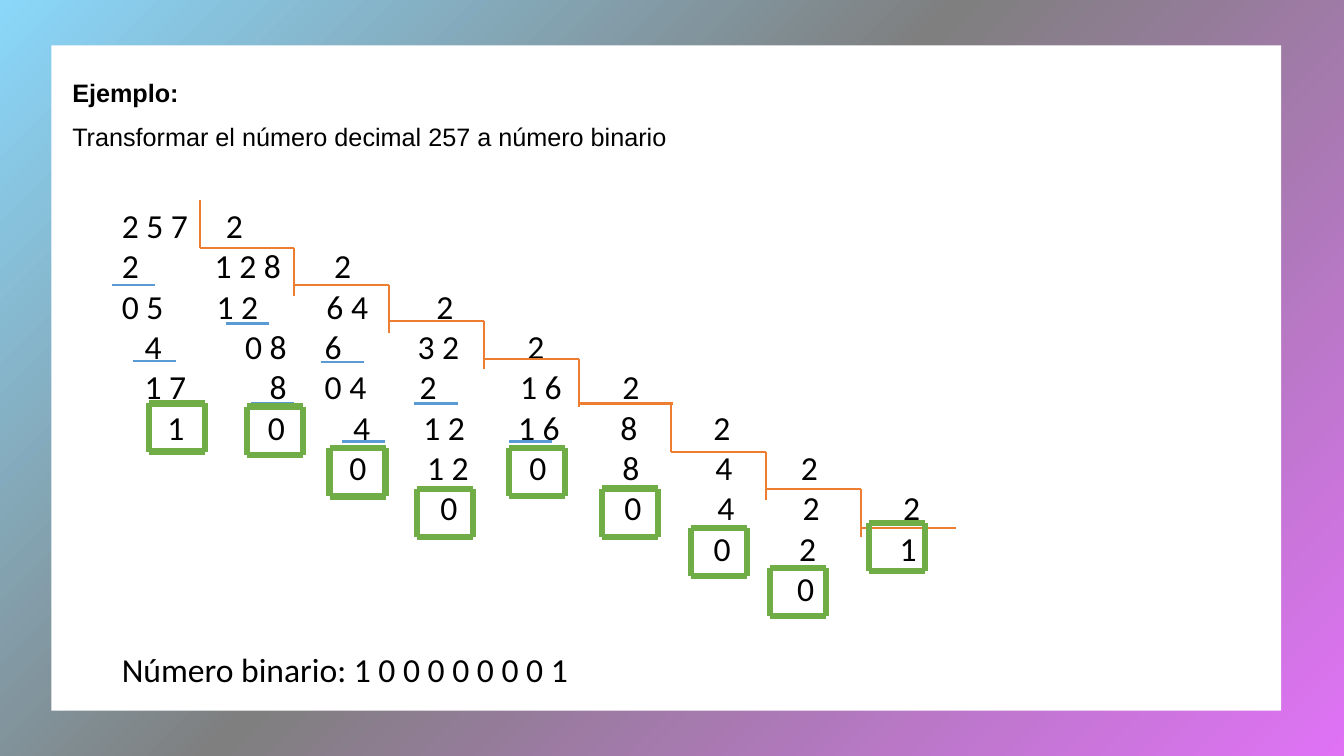
from lxml.etree import SubElement
from pptx import Presentation
from pptx.dml.color import RGBColor
from pptx.enum.shapes import MSO_CONNECTOR as CONNECTOR, MSO_SHAPE as SHAPE
from pptx.enum.text import MSO_AUTO_SIZE as AUTO_SIZE
from pptx.oxml.ns import qn
from pptx.util import Pt

COLORS = {
    "panel": "FFFFFF", "text": "000000",
    "bracket": "ED7D31", "underline": "5B9BD5", "remainder": "70AD47",
    "pink": "E072F6", "gray": "7F7F7F", "sky": "8AD7FA",
}

# Each row lists (offset from the left text edge, digits).
DIVISION_ROWS = [
    [(0, "2 5 7"), (74.4, "2")],
    [(0, "2"), (66.4, "1 2 8"), (151.7, "2")],
    [(0, "0 5"), (67.7, "1 2"), (146.2, "6 4"), (224.7, "2")],
    [(16.3, "4"), (88.1, "0 8"), (144.9, "6"), (211.3, "3 2"), (289.8, "2")],
    [(16.3, "1 7"), (105.7, "8"), (145, "0 4"), (212.7, "2"), (284.5, "1 6"), (357.6, "2")],
    [(32.5, "1"), (104.3, "0"), (165.3, "4"), (215.4, "1 2"), (283.1, "1 6"),
     (356.2, "8"), (422.6, "2")],
    [(162.6, "0"), (218.1, "1 2"), (291.2, "0"), (357.6, "8"), (424, "4"), (485, "2")],
    [(227.6, "0"), (359, "0"), (425.4, "4"), (486.4, "2"), (558.2, "2")],
    [(422.8, "0"), (483.8, "2"), (555.6, "1")],
    [(482.4, "0")],
]
RESULT_ROW = [(0, "Número binario: 1 0 0 0 0 0 0 0 1")]

BRACKET_WIDTH, BRACKET_DROP = 67.7, 34.4
BRACKET_LEFTS = [142.6, 210.2, 277.9, 345.6, 413.3, 479.6, 547.3, 615]
BRACKET_LEVELS = [142.6, 177.1, 203.8, 229.1, 256.3, 288.2, 322.6, 349.2, 377.3]

UNDERLINE_WIDTH = 31
UNDERLINES = [
    (79.9, 203.8), (95, 257.8), (161.3, 231.1), (179.3, 288), (229, 258.5), (244.1, 315.4),
    (295.9, 288.2), (298.1, 349.2), (363.6, 315.4), (431.3, 349.2), (496.1, 377.3),
    (550.1, 405.4),
]

REMAINDER_WIDTH, REMAINDER_HEIGHT = 40, 34.4
REMAINDERS = [
    (106.6, 288.2), (176.4, 290.4), (235.4, 320.2), (298.1, 349.2), (363.6, 319.9),
    (429.8, 349), (493.4, 377), (550.1, 405.6), (620.6, 373.5),
]


class DivisionSlide:
    def __init__(self, prs):
        self.s = prs.slides.add_slide(prs.slide_layouts[6])

    def color(self, name):
        return RGBColor.from_string(COLORS[name])

    def radial_background(self, stops):
        """Fill the background with rings centred on the bottom right corner."""
        self.s.background.fill.gradient()
        grad = self.s.element.find(".//" + qn("a:gradFill"))
        for child in list(grad):
            grad.remove(child)
        gs_list = SubElement(grad, qn("a:gsLst"))
        for percent, name in stops:
            gs = SubElement(gs_list, qn("a:gs"), pos=str(percent * 1000))
            SubElement(gs, qn("a:srgbClr"), val=COLORS[name])
        rings = SubElement(grad, qn("a:path"), {"path": "circle"})
        SubElement(rings, qn("a:fillToRect"), l="100000", t="100000")
        SubElement(grad, qn("a:tileRect"), r="-100000", b="-100000")

    def rect(self, x, y, w, h, fill):
        sp = self.s.shapes.add_shape(SHAPE.RECTANGLE, Pt(x), Pt(y), Pt(w), Pt(h))
        sp.shadow.inherit = False
        sp.fill.solid()
        sp.fill.fore_color.rgb = self.color(fill)
        sp.line.fill.background()

    def line(self, x1, y1, x2, y2, name, weight=1.5):
        ln = self.s.shapes.add_connector(
            CONNECTOR.STRAIGHT, Pt(x1), Pt(y1), Pt(x2), Pt(y2))
        ln.line.color.rgb = self.color(name)
        ln.line.width = Pt(weight)
        SubElement(ln.element.spPr, qn("a:effectLst"))

    def frame(self, x, y, w, h, name, weight):
        """Draw a box from four separate lines."""
        right, bottom = x + w, y + h
        for ends in [(x, bottom, right, bottom), (x, y, right, y),
                     (x, y, x, bottom), (right, y, right, bottom)]:
            self.line(*ends, name, weight)

    def text_box(self, x, y, w, h):
        tf = self.s.shapes.add_textbox(Pt(x), Pt(y), Pt(w), Pt(h)).text_frame
        tf.word_wrap = True
        tf.auto_size = AUTO_SIZE.SHAPE_TO_FIT_TEXT
        return tf

    def paragraph(self, tf, row, font, size, bold=False, before=0):
        """Write one row, reaching each indented piece by a tab stop."""
        p = tf.paragraphs[0]
        if p.runs:
            p = tf.add_paragraph()
        p.space_before = Pt(before)
        stops = [x for x, _ in row if x]
        if stops:
            tabs = SubElement(p._p.get_or_add_pPr(), qn("a:tabLst"))
            for x in stops:
                SubElement(tabs, qn("a:tab"), pos=str(Pt(x)), algn="l")
        p.add_run().text = "".join(("\t" if x else "") + text for x, text in row)
        p.font.name = font
        p.font.size = Pt(size)
        p.font.bold = bold
        p.font.color.rgb = self.color("text")


def main():
    prs = Presentation()
    prs.slide_width, prs.slide_height = Pt(960), Pt(540)
    slide = DivisionSlide(prs)
    slide.radial_background([(0, "pink"), (54, "gray"), (100, "sky")])
    slide.rect(36.7, 32.5, 878.4, 475.2, "panel")

    heading = slide.text_box(44.6, 51.8, 854.6, 61.2)
    slide.paragraph(heading, [(0, "Ejemplo:")], "Arial", 18, bold=True)
    slide.paragraph(heading, [(0, "Transformar el número decimal 257 a número binario")],
                    "Arial", 18, before=10)

    division = slide.text_box(79.9, 142.8, 703.4, 356.4)
    for row in DIVISION_ROWS:
        slide.paragraph(division, row, "Calibri", 24)
    slide.paragraph(division, RESULT_ROW, "Calibri", 24, before=29)

    for x, top, base in zip(BRACKET_LEFTS, BRACKET_LEVELS, BRACKET_LEVELS[1:]):
        slide.line(x, top, x, top + BRACKET_DROP, "bracket")
        slide.line(x, base, x + BRACKET_WIDTH, base, "bracket")
    for x, y in UNDERLINES:
        slide.line(x, y, x + UNDERLINE_WIDTH, y, "underline")
    for x, y in REMAINDERS:
        slide.frame(x, y, REMAINDER_WIDTH, REMAINDER_HEIGHT, "remainder", 4.5)

    prs.save("out.pptx")


if __name__ == "__main__":
    main()
